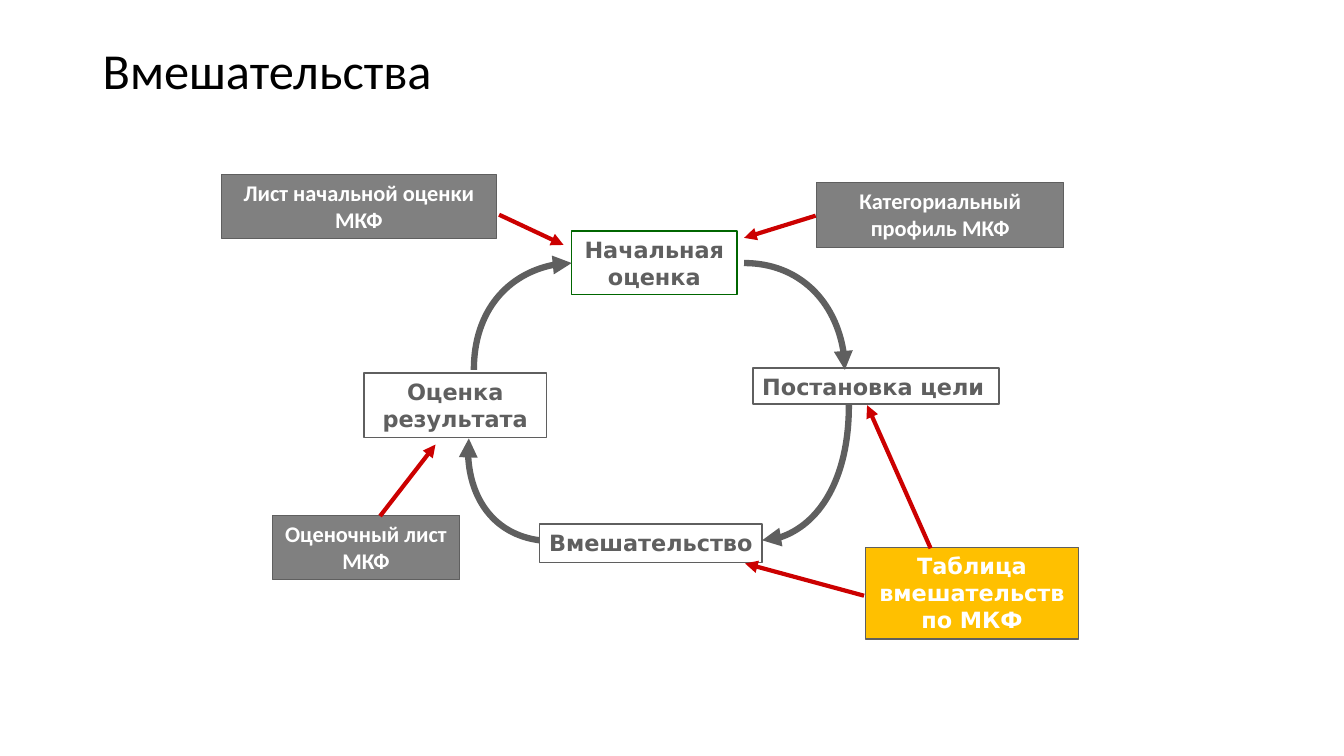
"""Build a slide showing the rehabilitation cycle and its ICF documents."""
from lxml import etree
from pptx import Presentation
from pptx import util as u
from pptx.dml.color import RGBColor
from pptx.enum import shapes, text
from pptx.oxml.ns import qn

COLORS = {"black": "000000", "white": "FFFFFF", "gray": "5F5F5F", "panel": "808080",
          "green": "006600", "amber": "FFC000", "red": "CC0000"}
TITLE = ("Вмешательства", (0.92, 0, 11.5, 1.45))
STAGES = [
    (["Начальная", "оценка"], (5.67, 2.29, 1.64, 0.63), "green", "CENTER"),
    (["Постановка цели"], (7.47, 3.65, 2.44, 0.36), "gray", "LEFT"),
    (["Вмешательство"], (5.35, 5.2, 2.21, 0.38), "gray", "CENTER"),
    (["Оценка результата"], (3.61, 3.7, 1.81, 0.64), "gray", "CENTER"),
]
DOCUMENTS = [
    (["Категориальный профиль МКФ"], (8.1, 1.81, 2.45, 0.65), "panel", "Calibri"),
    (["Лист начальной оценки МКФ"], (2.2, 1.73, 2.72, 0.64), "panel", "Calibri"),
    (["Таблица вмешательств по МКФ"], (8.58, 5.43, 2.12, 0.91), "amber", "DejaVu Sans"),
    (["Оценочный лист МКФ"], (2.7, 5.11, 1.86, 0.64), "panel", "Calibri"),
]
CYCLE_CURVES = [
    [(4.7, 3.67), (4.7, 3.08), (5.13, 2.61), (5.67, 2.61)],
    [(7.38, 2.61), (7.93, 2.61), (8.38, 3.08), (8.38, 3.67)],
    [(8.42, 4.02), (8.42, 4.76), (8.03, 5.36), (7.56, 5.36)],
    [(5.35, 5.36), (4.9, 5.3), (4.59, 4.85), (4.65, 4.35)],
]
DOCUMENT_ARROWS = [
    ((4.95, 2.13), (5.59, 2.43)),
    ((8.09, 2.14), (7.38, 2.36)),
    ((8.57, 5.91), (7.39, 5.59)),
    ((9.23, 5.44), (8.6, 4.02)),
    ((3.77, 5.12), (4.32, 4.41)),
]


def inches(values):
    return [u.Inches(value) for value in values]


def color(name):
    return RGBColor.from_string(COLORS[name])


def style_line(line, name, width):
    line.color.rgb = color(name)
    line.width = u.Pt(width)


def add_arrowhead(line):
    etree.SubElement(line._get_or_add_ln(), qn("a:tailEnd"), type="triangle")


def write(frame, lines, font_name, size, ink, bold, align):
    frame.word_wrap = True
    para = frame.paragraphs[0]
    para.alignment = getattr(text.PP_ALIGN, align)
    for index, words in enumerate(lines):
        if index:
            para.add_line_break()
        span = para.add_run()
        span.text = words
        span.font.name, span.font.size, span.font.bold = font_name, u.Pt(size), bold
        span.font.color.rgb = color(ink)
    return para


def add_box(page, lines, place, fill, outline, width, font_name, ink, align, side):
    box = page.shapes.add_shape(shapes.MSO_SHAPE.RECTANGLE, *inches(place))
    box.shadow.inherit = False
    if fill:
        box.fill.solid()
        box.fill.fore_color.rgb = color(fill)
    else:
        box.fill.background()
    style_line(box.line, outline, width)
    frame = box.text_frame
    frame.vertical_anchor = text.MSO_ANCHOR.TOP
    frame.margin_left = frame.margin_right = u.Inches(side)
    write(frame, lines, font_name, 16, ink, True, align)
    frame.auto_size = text.MSO_AUTO_SIZE.SHAPE_TO_FIT_TEXT


def add_curve(page, points):
    start, *controls = [inches(point) for point in points]
    builder = page.shapes.build_freeform(*start)
    builder.add_line_segments(controls, close=False)
    curve = builder.convert_to_shape()
    outline = curve._element.spPr.find(".//" + qn("a:path"))
    bezier = etree.SubElement(outline, qn("a:cubicBezTo"))
    for segment in outline.findall(qn("a:lnTo")):
        bezier.append(segment[0])
        outline.remove(segment)
    curve.shadow.inherit = False
    curve.fill.background()
    style_line(curve.line, "gray", 4.5)
    add_arrowhead(curve.line)


def add_arrow(page, start, end):
    arrow = page.shapes.add_connector(shapes.MSO_CONNECTOR.STRAIGHT,
                                      *inches(start), *inches(end))
    style_line(arrow.line, "red", 3)
    add_arrowhead(arrow.line)
    etree.SubElement(arrow._element.spPr, qn("a:effectLst"))


def main():
    deck = Presentation()
    deck.slide_width, deck.slide_height = inches((13.33, 7.5))
    page = deck.slides.add_slide(deck.slide_layouts[6])
    words, place = TITLE
    title = page.shapes.add_textbox(*inches(place)).text_frame
    title.vertical_anchor = text.MSO_ANCHOR.MIDDLE
    write(title, [words], "Calibri", 36, "black", False, "LEFT").line_spacing = 0.9
    for lines, place, outline, align in STAGES:
        add_box(page, lines, place, None, outline, 1, "DejaVu Sans", "gray", align, 0.09)
    for points in CYCLE_CURVES:
        add_curve(page, points)
    for lines, place, fill, font_name in DOCUMENTS:
        add_box(page, lines, place, fill, "gray", 0.75, font_name, "white", "CENTER", 0.1)
    for start, end in DOCUMENT_ARROWS:
        add_arrow(page, start, end)
    deck.save("out.pptx")


if __name__ == "__main__":
    main()
